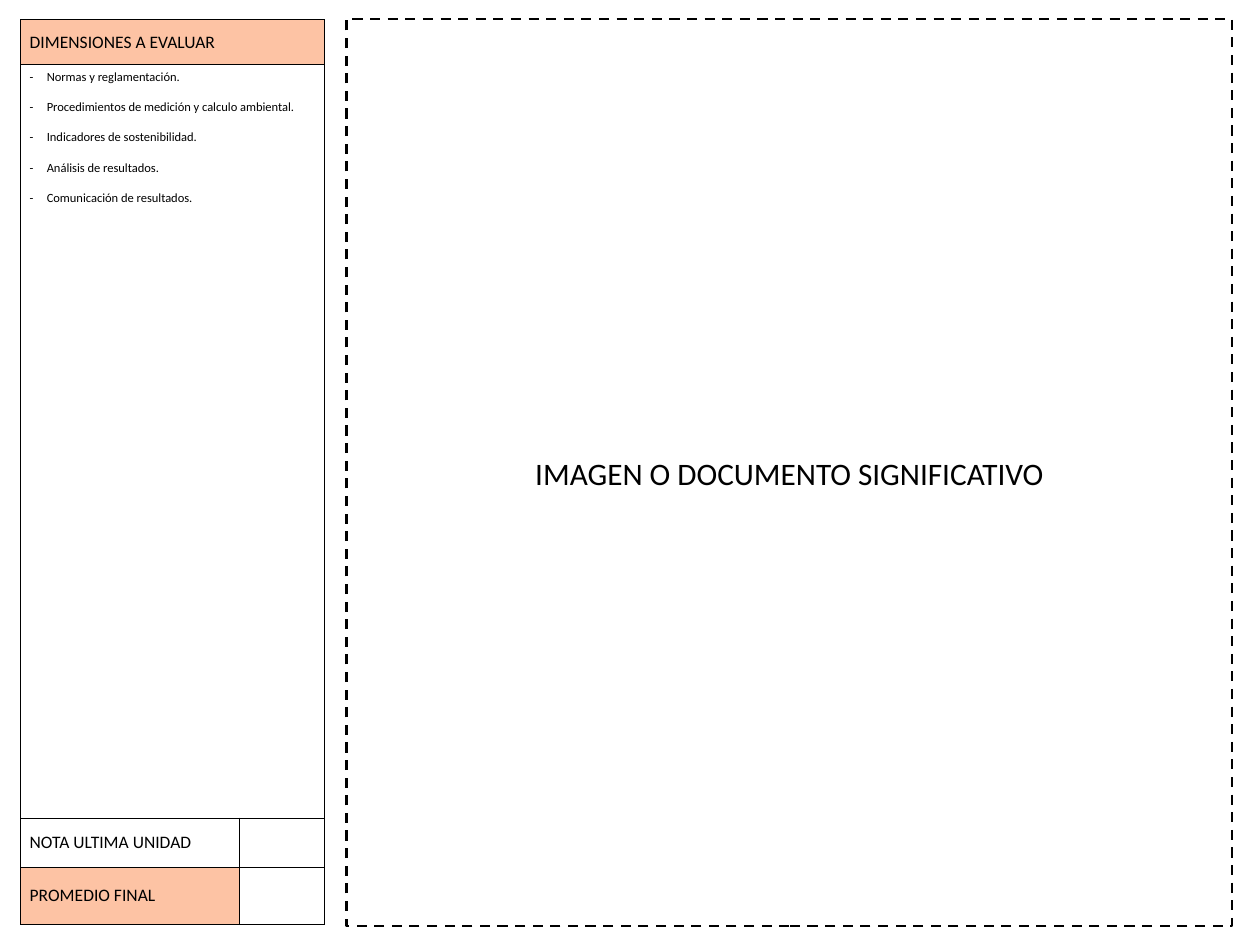
from lxml.etree import SubElement
from pptx import Presentation
from pptx.dml.color import RGBColor
from pptx.enum.dml import MSO_LINE_DASH_STYLE as Dash
from pptx.enum.shapes import MSO_SHAPE as Shape
from pptx.enum.text import MSO_ANCHOR as Anchor, PP_ALIGN as Align
from pptx.oxml.ns import qn
from pptx.util import Inches, Pt

COLORS = {"ink": "000000", "peach": "FDC3A4", "paper": "FFFFFF"}
FONT = "Calibri"
COLUMNS = [2.43, 0.95]
ROWS = [0.5, 8.37, 0.55, 0.63]
DIMENSIONS = [
    "Normas y reglamentación.",
    "Procedimientos de medición y calculo ambiental.",
    "Indicadores de sostenibilidad.",
    "Análisis de resultados.",
    "Comunicación de resultados.",
]
CELLS = [
    [("DIMENSIONES A EVALUAR", "peach"), ("", "peach")],
    [("\n".join(DIMENSIONS), "paper"), ("", "paper")],
    [("NOTA ULTIMA UNIDAD", "paper"), ("", "paper")],
    [("PROMEDIO FINAL", "peach"), ("", "paper")],
]


def color(name):
    return RGBColor.from_string(COLORS[name])


def format_text(frame, size):
    for para in frame.paragraphs:
        para.font.size = Pt(size)
        for span in para.runs:
            span.font.name = FONT
            span.font.size = Pt(size)
            span.font.color.rgb = color("ink")


def add_image_area(page):
    box = page.shapes.add_shape(
        Shape.RECTANGLE, Inches(3.85), Inches(0.21), Inches(9.84), Inches(10.08)
    )
    box.shadow.inherit = False
    box.fill.background()
    box.line.color.rgb = color("ink")
    box.line.width = Pt(2)
    box.line.dash_style = Dash.DASH
    frame = box.text_frame
    frame.word_wrap = True
    frame.vertical_anchor = Anchor.MIDDLE
    frame.text = "IMAGEN O DOCUMENTO SIGNIFICATIVO"
    frame.paragraphs[0].alignment = Align.CENTER
    format_text(frame, 25)


def set_borders(cell, widths):
    properties = cell._tc.get_or_add_tcPr()
    for side, width in widths.items():
        line = SubElement(properties, qn(f"a:ln{side}"), w=str(Pt(width)))
        fill = SubElement(line, qn("a:solidFill"))
        SubElement(fill, qn("a:srgbClr"), val=COLORS["ink"])


def border_widths(cell, row, column):
    if cell.is_merge_origin:
        return dict.fromkeys("LRTB", 1)
    if cell.is_spanned:
        return dict.fromkeys("RTB", 1)
    return {
        "L": 1 if column == 0 else 0.5,
        "R": 0.5 if column == 0 else 1,
        "T": 1 if row == 2 else 0.5,
        "B": 1 if row == len(ROWS) - 1 else 0.5,
    }


def format_list(cell):
    cell.vertical_anchor = Anchor.TOP
    format_text(cell.text_frame, 10)
    for para in cell.text_frame.paragraphs:
        para.space_after = Pt(12.2)
        properties = para._p.get_or_add_pPr()
        properties.set("marL", str(Inches(0.19)))
        properties.set("indent", str(Inches(-0.19)))
        SubElement(properties, qn("a:buFont"), typeface=FONT)
        SubElement(properties, qn("a:buChar"), char="-")
        default_font = properties.find(qn("a:defRPr"))
        if default_font is not None:
            properties.append(default_font)


def add_evaluation_table(page):
    table = page.shapes.add_table(
        len(ROWS), len(COLUMNS), Inches(0.23), Inches(0.22),
        Inches(sum(COLUMNS)), Inches(sum(ROWS)),
    ).table
    table.first_row = False
    table.horz_banding = False
    for column, width in zip(table.columns, COLUMNS):
        column.width = Inches(width)
    for row, height in zip(table.rows, ROWS):
        row.height = Inches(height)
    for index in (0, 1):
        table.cell(index, 0).merge(table.cell(index, 1))
    for row, entries in enumerate(CELLS):
        for column, (text, fill) in enumerate(entries):
            cell = table.cell(row, column)
            cell.text_frame.text = text
            cell.vertical_anchor = Anchor.MIDDLE
            format_text(cell.text_frame, 14)
            set_borders(cell, border_widths(cell, row, column))
            cell.fill.solid()
            cell.fill.fore_color.rgb = color(fill)
    format_list(table.cell(1, 0))


def main():
    deck = Presentation()
    deck.slide_width = Inches(14)
    deck.slide_height = Inches(10.5)
    page = deck.slides.add_slide(deck.slide_layouts[6])
    add_image_area(page)
    add_evaluation_table(page)
    deck.save("out.pptx")


if __name__ == "__main__":
    main()
